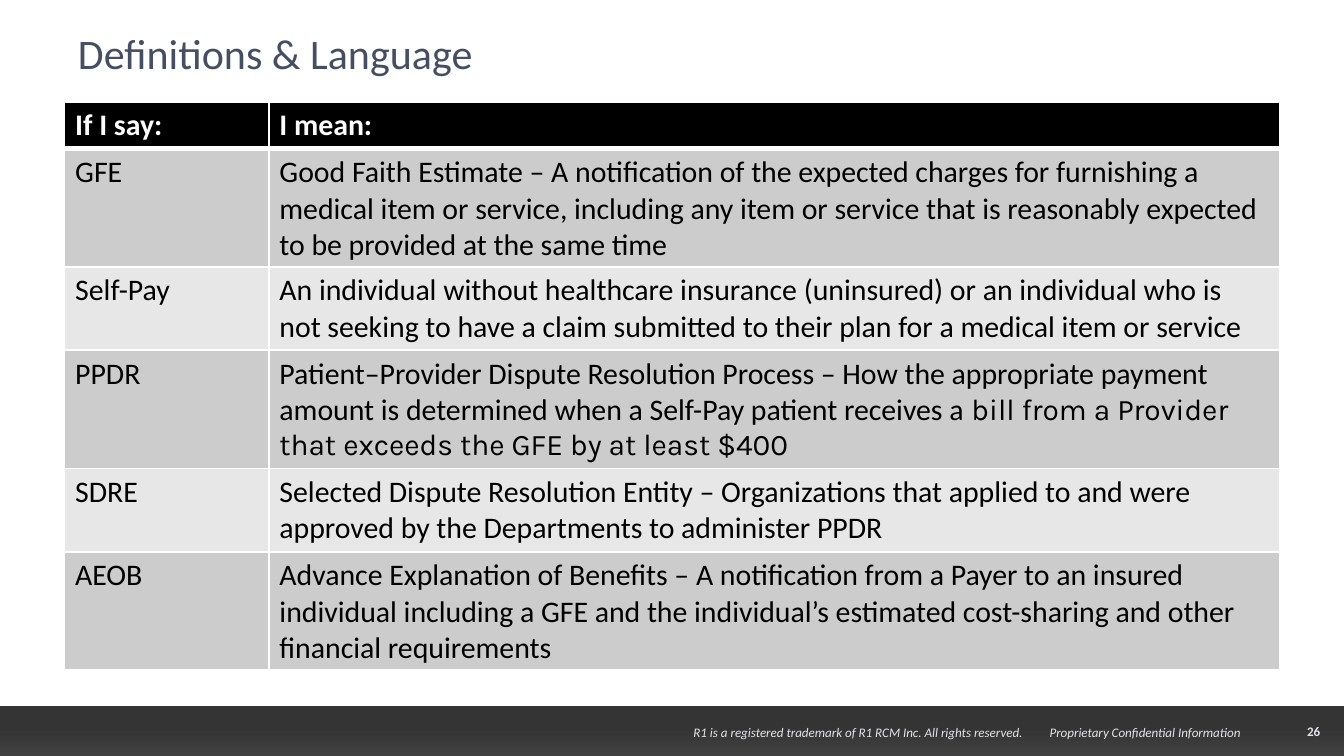
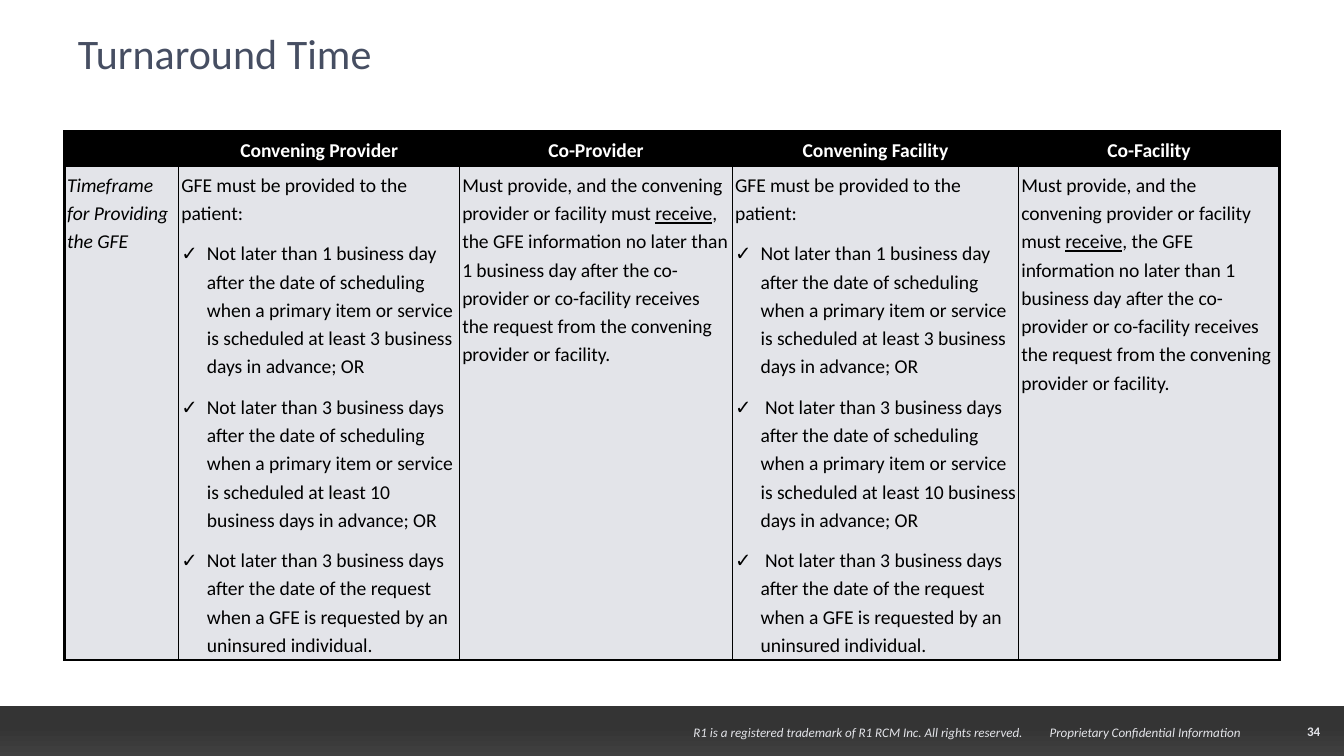
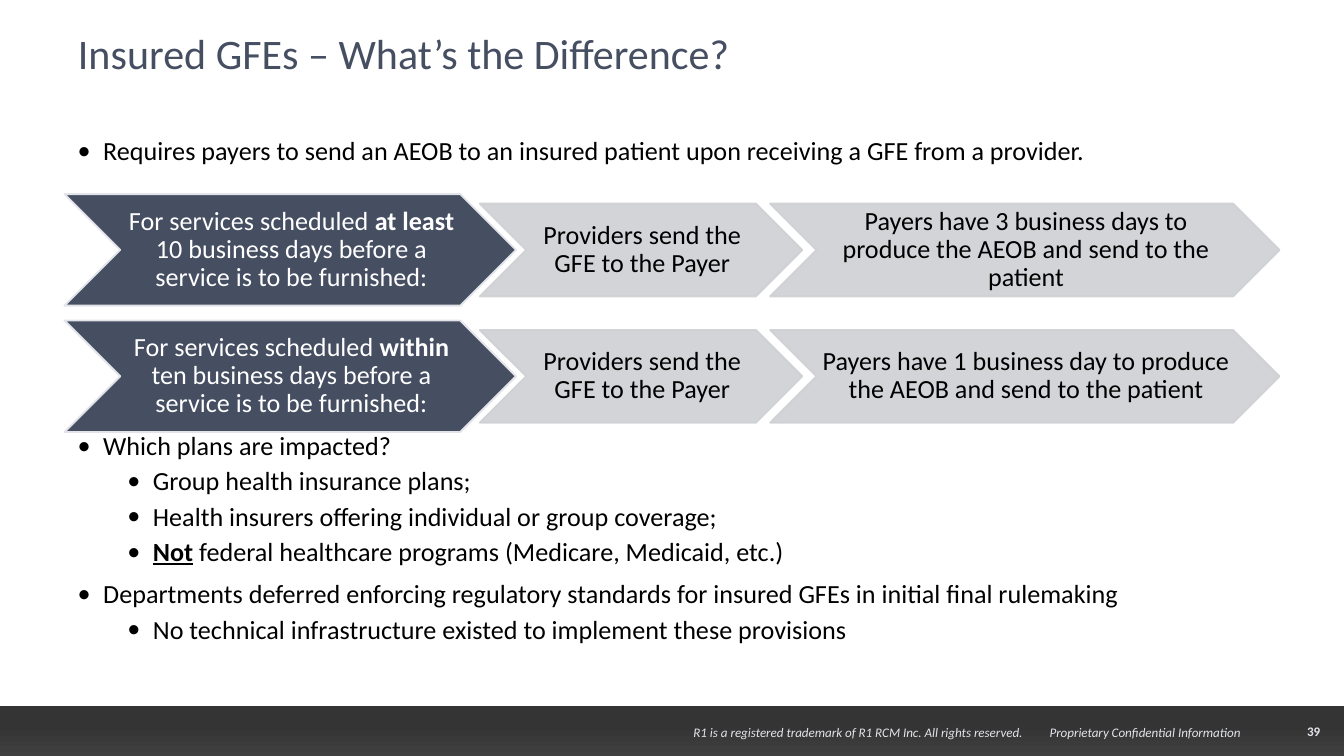
from copy import deepcopy

from lxml import etree
from pptx import Presentation
from pptx import util as u
from pptx.dml.color import RGBColor
from pptx.enum import shapes, text
from pptx.oxml import ns

FONT = "Calibri"
SLATE = RGBColor(0x46, 0x4E, 0x62)
PALE = RGBColor(0xE3, 0xE4, 0xE9)
SILVER = RGBColor(0xCF, 0xD0, 0xD3)
BLACK = RGBColor(0, 0, 0)
WHITE = RGBColor(255, 255, 255)
ROW_DARK = RGBColor(0xCC, 0xCC, 0xCC)
ROW_LIGHT = RGBColor(0xE7, 0xE7, 0xE7)
BAND_STOPS = [RGBColor(0x34, 0x34, 0x34), RGBColor(0x36, 0x36, 0x36), RGBColor(0x40, 0x40, 0x40)]

MARGIN = 0.48
CONTENT = 9.04
BODY_TOP = 0.98
LEFT, CENTER = text.PP_ALIGN.LEFT, text.PP_ALIGN.CENTER


def write(frame, content, size=14, color=BLACK, align=LEFT, line=None, before=0,
          bullet=None, indent=0, tab=None, emphasis=None, **font):
    paragraph = frame.paragraphs[0]
    if paragraph.runs:
        paragraph = frame.add_paragraph()
        paragraph.space_before = u.Pt(before)
    paragraph.alignment = align
    if line:
        paragraph.line_spacing = line
    properties = paragraph._p.get_or_add_pPr()
    if bullet:
        properties.set("marL", str(u.Inches(indent)))
        properties.set("indent", str(-u.Inches(0.19)))
        etree.SubElement(properties, ns.qn("a:buFont"), typeface=FONT)
        etree.SubElement(properties, ns.qn("a:buChar"), char=bullet)
    if tab:
        tabs = etree.SubElement(properties, ns.qn("a:tabLst"))
        etree.SubElement(tabs, ns.qn("a:tab"), pos=str(u.Inches(tab)), algn="l")
    if not content:
        etree.SubElement(paragraph._p, ns.qn("a:endParaRPr"), sz=str(int(size * 100)))
        return
    for index, part in enumerate(content.split("|")):
        if not part:
            continue
        run = paragraph.add_run()
        run.text = part
        run.font.size = u.Pt(size)
        run.font.color.rgb = color
        style = {"name": FONT, **font, **(emphasis if index % 2 else {})}
        for name, value in style.items():
            setattr(run.font, name, value)


def format_cell(cell, fill, border, widths, margins):
    properties = cell._tc.get_or_add_tcPr()
    for side, width in zip("LRTB", widths):
        edge = etree.SubElement(properties, ns.qn(f"a:ln{side}"), w=str(u.Pt(width)))
        solid = etree.SubElement(edge, ns.qn("a:solidFill"))
        etree.SubElement(solid, ns.qn("a:srgbClr"), val=str(border))
    cell.fill.solid()
    cell.fill.fore_color.rgb = fill
    cell.margin_left = cell.margin_right = u.Inches(margins[0])
    cell.margin_top = cell.margin_bottom = u.Inches(margins[1])


presentation = Presentation()
presentation.slide_width = u.Inches(10)
presentation.slide_height = presentation.slide_width * 9 // 16

slides = []
for title_text, number in [
    ("Definitions & Language", "26"),
    ("Turnaround Time", "34"),
    ("Insured GFEs – What’s the Difference?", "39"),
]:
    slide = presentation.slides.add_slide(presentation.slide_layouts[5])
    slides.append(slide)

    title = slide.shapes.title
    title.left, title.top = u.Inches(MARGIN), u.Inches(0.09)
    title.width, title.height = u.Inches(CONTENT), u.Inches(0.6)
    title.text_frame.auto_size = text.MSO_AUTO_SIZE.NONE
    title.text_frame.vertical_anchor = text.MSO_ANCHOR.MIDDLE
    write(title.text_frame, title_text, size=22.5, color=SLATE)

    band = slide.shapes.add_shape(
        shapes.MSO_SHAPE.RECTANGLE, 0, u.Inches(5.25), u.Inches(10.01), u.Inches(0.38))
    band.shadow.inherit = False
    band.line.fill.background()
    band.fill.gradient()
    band.fill.gradient_angle = 270
    first_stop = band._element.spPr.find(".//" + ns.qn("a:gs"))
    first_stop.addnext(deepcopy(first_stop))
    for index, stop in enumerate(band.fill.gradient_stops):
        stop.position = index / 2
        stop.color.rgb = BAND_STOPS[index]

    page = slide.shapes.add_textbox(u.Inches(9.59), u.Inches(5.36), u.Inches(0.37), u.Inches(0.17))
    page.text_frame.margin_left = page.text_frame.margin_right = 0
    write(page.text_frame, number, size=7, color=PALE, align=CENTER, bold=True)

    notice = slide.shapes.add_textbox(u.Inches(4.85), u.Inches(5.35), u.Inches(4.83), u.Inches(0.19))
    notice.text_frame.margin_left = u.Inches(0.31)
    write(notice.text_frame,
          "R1 is a registered trademark of R1 RCM Inc. All rights reserved.\tProprietary Confidential Information",
          size=7, color=PALE, italic=True, tab=2.65)
    for box in (page, notice):
        box.text_frame.word_wrap = True
        box.text_frame.vertical_anchor = text.MSO_ANCHOR.MIDDLE

definitions_slide, turnaround_slide, insured_slide = slides

definitions = [
    ("If I say:", "I mean:", 0.32),
    ("GFE", "Good Faith Estimate – A notification of the expected charges for furnishing a medical item "
     "or service, including any item or service that is reasonably expected to be provided at the same time", 0.88),
    ("Self-Pay", "An individual without healthcare insurance (uninsured) or an individual who is not seeking "
     "to have a claim submitted to their plan for a medical item or service", 0.62),
    ("PPDR", "Patient–Provider Dispute Resolution Process – How the appropriate payment amount is determined "
     "when a Self-Pay patient receives a| bill from a Provider that exceeds the GFE by at least $400", 0.88),
    ("SDRE", "Selected Dispute Resolution Entity – Organizations that applied to and were approved by the "
     "Departments to administer PPDR", 0.62),
    ("AEOB", "Advance Explanation of Benefits – A notification from a Payer to an insured individual including "
     "a GFE and the individual’s estimated cost-sharing and other financial requirements", 0.88),
]
table = definitions_slide.shapes.add_table(
    len(definitions), 2, u.Inches(MARGIN), u.Inches(0.76), u.Inches(CONTENT), u.Inches(4.2)).table
table.columns[0].width, table.columns[1].width = u.Inches(1.52), u.Inches(7.52)
for row, (term, meaning, height) in enumerate(definitions):
    table.rows[row].height = u.Inches(height)
    header = row == 0
    fill = BLACK if header else ROW_DARK if row % 2 else ROW_LIGHT
    widths = (1, 1, 3 if row == 1 else 1, 3 if header else 1)
    for column, content in enumerate((term, meaning)):
        cell = table.cell(row, column)
        format_cell(cell, fill, WHITE, widths, (0.08, 0.04))
        write(cell.text_frame, content, size=16, color=WHITE if header else BLACK,
              bold=header, emphasis={"name": "Karla"})

convening = [
    "GFE must be provided to the patient:",
    "Not later than 1 business day after the date of scheduling when a primary item or service is "
    "scheduled at least 3 business days in advance; OR",
    "Not later than 3 business days after the date of scheduling when a primary item or service is "
    "scheduled at least 10 business days in advance; OR",
    "Not later than 3 business days after the date of the request when a GFE is requested by an "
    "uninsured individual.",
]
supporting = [
    "Must provide, and the convening provider or facility must |receive|, the GFE information no later "
    "than 1 business day after the co-provider or co-facility receives the request from the convening "
    "provider or facility.",
]
turnaround = [
    ("", ["Timeframe for Providing the GFE"], 0.85),
    ("Convening Provider", convening, 2.09),
    ("Co-Provider", supporting, 2.03),
    ("Convening Facility", convening[:2] + [" " + item for item in convening[2:]], 2.13),
    ("Co-Facility", supporting, 1.94),
]
table = turnaround_slide.shapes.add_table(
    2, len(turnaround), u.Inches(MARGIN), u.Inches(BODY_TOP), u.Inches(CONTENT), u.Inches(3.93)).table
table.rows[0].height, table.rows[1].height = u.Inches(0.26), u.Inches(3.67)
for column, (heading, items, width) in enumerate(turnaround):
    table.columns[column].width = u.Inches(width)
    left = 1.5 if column == 0 else 0.5
    right = 1.5 if column == len(turnaround) - 1 else 0.5
    head, body = table.cell(0, column), table.cell(1, column)
    format_cell(head, BLACK, BLACK, (left, right, 1.5, 0.75), (0.02, 0.02))
    format_cell(body, PALE, BLACK, (left, right, 0.75, 1.5), (0.02, 0.02))
    write(head.text_frame, heading, size=10.5, color=WHITE, align=CENTER, line=1.19, bold=True)
    for index, item in enumerate(items):
        write(body.text_frame, item, size=10.5, line=1.19, before=6.5, bullet="✓" if index else None,
              indent=0.19, bold=False, italic=column == 0, emphasis={"underline": True})

bullets = [
    (0, 0, "Requires payers to send an AEOB to an insured patient upon receiving a GFE from a provider."),
    (0, 142.6, "Which plans are impacted?"),
    (1, 3.8, "Group health insurance plans;"),
    (1, 3.8, "Health insurers offering individual or group coverage;"),
    (1, 3.8, "|Not| federal healthcare programs (Medicare, Medicaid, etc.)"),
    (0, 7.5, "Departments deferred enforcing regulatory standards for insured GFEs in initial final rulemaking"),
    (1, 3.8, "No technical infrastructure existed to implement these provisions"),
]
box = insured_slide.shapes.add_textbox(
    u.Inches(MARGIN), u.Inches(BODY_TOP), u.Inches(CONTENT), u.Inches(4.15))
box.text_frame.word_wrap = True
for level, before, item in bullets:
    write(box.text_frame, item, line=0.9, before=before, bullet="•",
          indent=0.56 if level else 0.19, emphasis={"bold": True, "underline": True})

processes = [
    ("For services scheduled |at least |10 business days before a service is to be furnished:",
     "Providers send the GFE to the Payer",
     "Payers have 3 business days to produce the AEOB and send to the patient"),
    ("For services scheduled |within| ten business days before a service is to be furnished:",
     "Providers send the GFE to the Payer",
     "Payers have 1 business day to produce the AEOB and send to the patient"),
]
steps = [(MARGIN, 3.36, 0.83), (3.57, 2.4, 0.69), (5.73, 3.79, 0.69)]
for row, process in enumerate(processes):
    middle = 1.86 + row * 0.94
    for column, (content, (left, width, height)) in enumerate(zip(process, steps)):
        lead = column == 0
        chevron = insured_slide.shapes.add_shape(
            shapes.MSO_SHAPE.CHEVRON, u.Inches(left), u.Inches(middle - height / 2),
            u.Inches(width), u.Inches(height))
        chevron.shadow.inherit = False
        chevron.fill.solid()
        chevron.fill.fore_color.rgb = SLATE if lead else SILVER
        chevron.line.color.rgb = PALE if lead else SILVER
        chevron.line.width = u.Pt(1)
        if not lead:
            for tint in chevron._element.spPr.iter(ns.qn("a:srgbClr")):
                etree.SubElement(tint, ns.qn("a:alpha"), val="90000")
        frame = chevron.text_frame
        frame.word_wrap = True
        frame.vertical_anchor = text.MSO_ANCHOR.MIDDLE
        frame.margin_left, frame.margin_right = u.Inches(0.02), 0
        frame.margin_top = frame.margin_bottom = u.Inches(0.01)
        write(frame, content, color=WHITE if lead else BLACK, align=CENTER, line=0.9, emphasis={"bold": True})

presentation.save("out.pptx")
